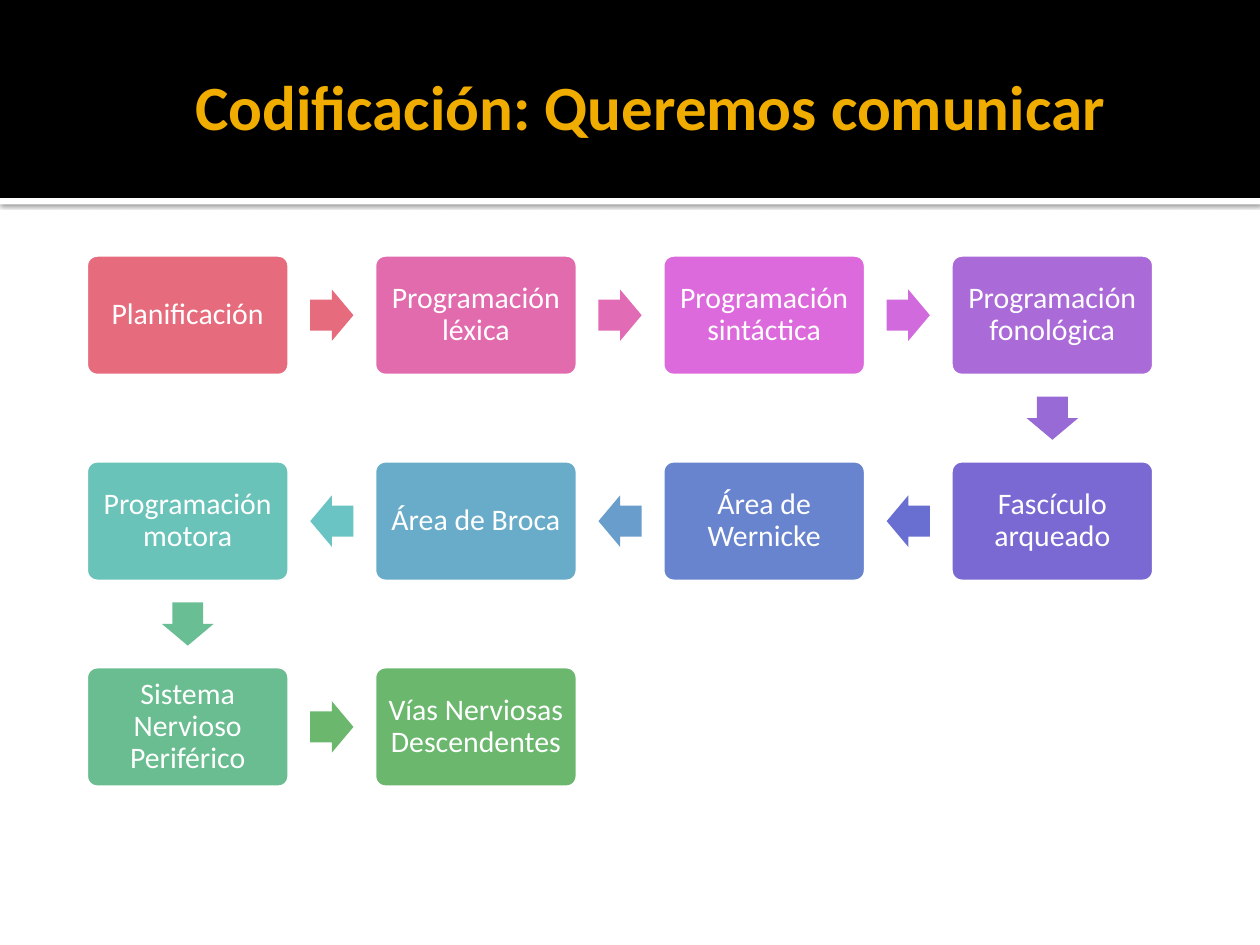
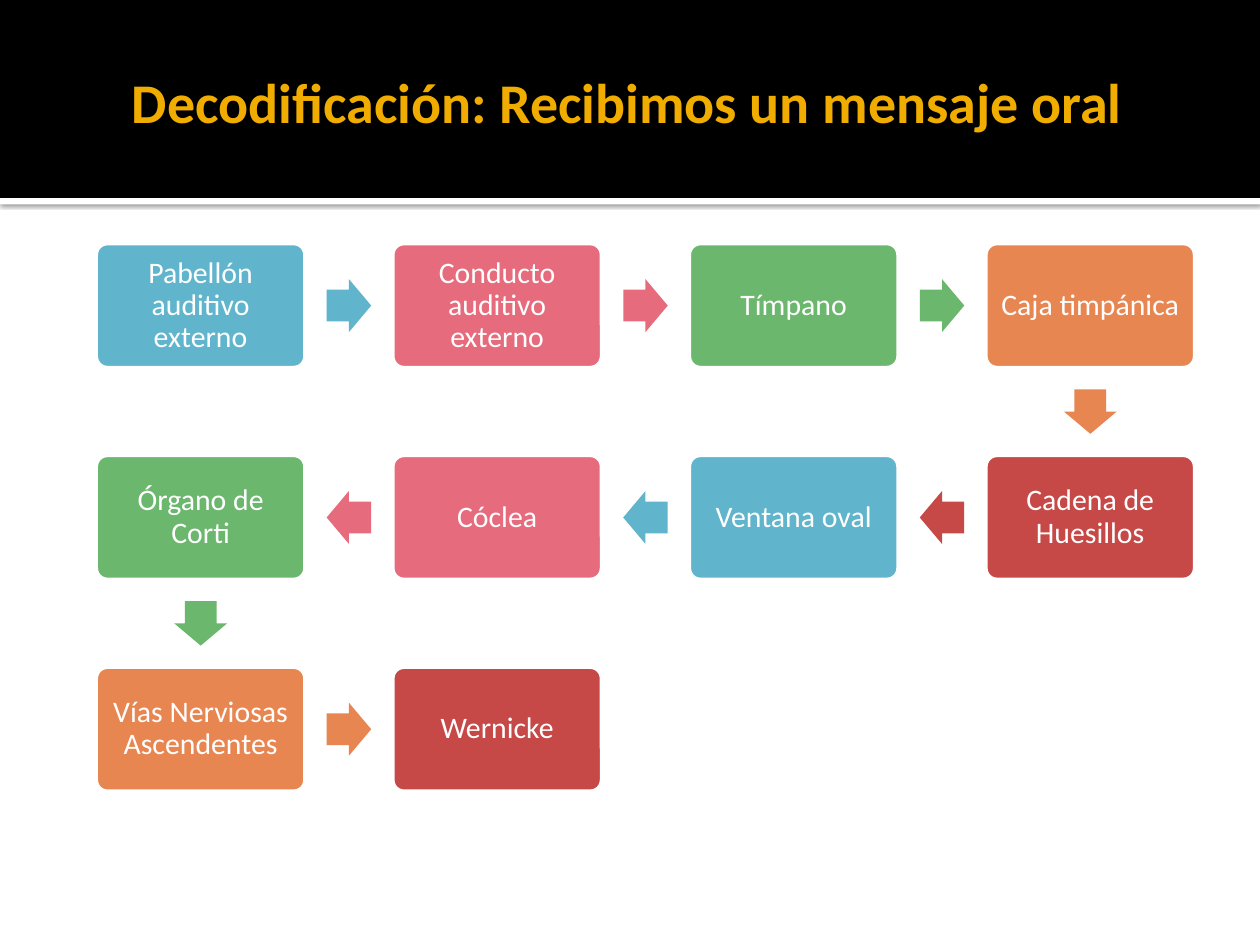
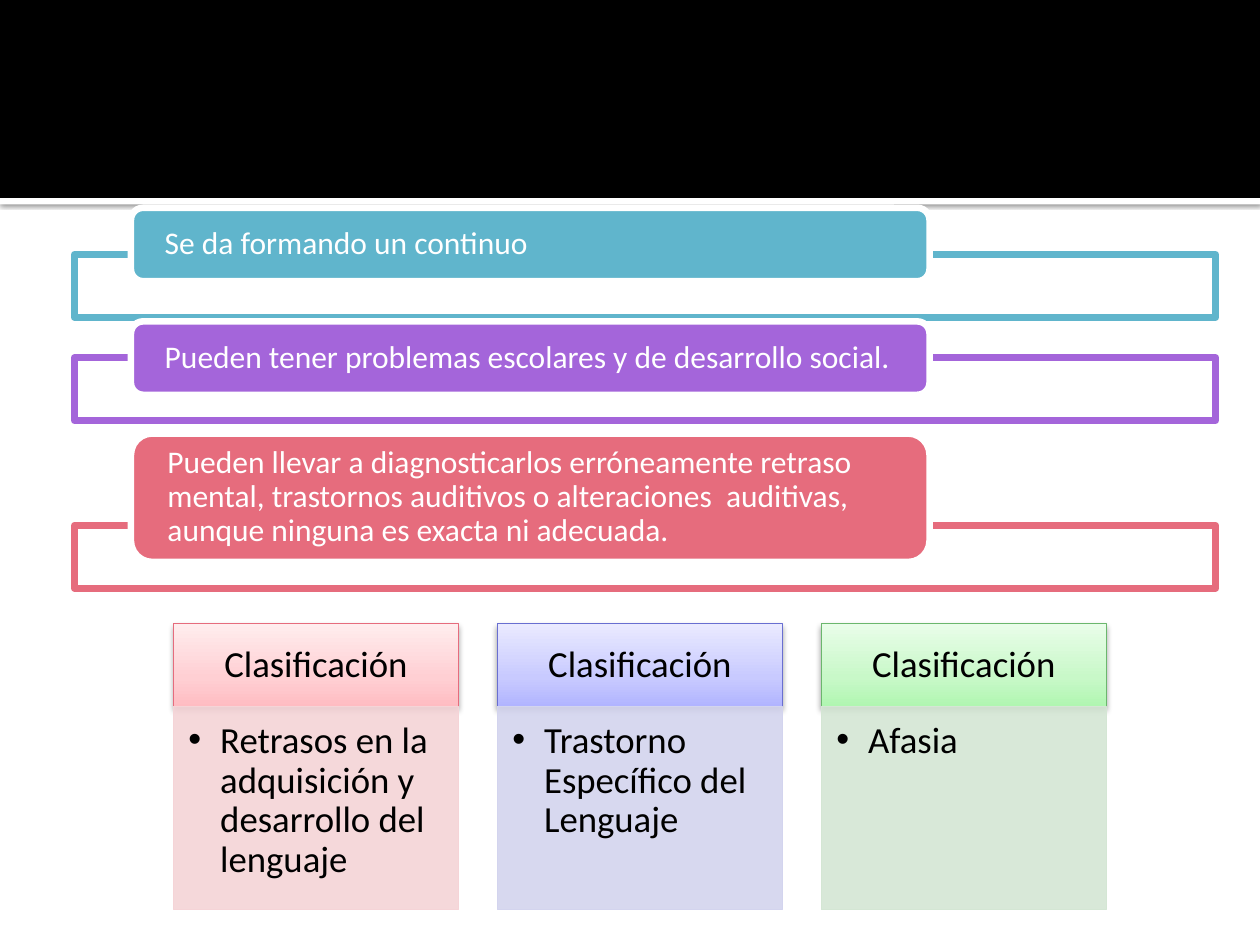
from copy import deepcopy

from pptx import Presentation
from pptx.dml.color import RGBColor
from pptx.enum.shapes import MSO_SHAPE
from pptx.enum.text import MSO_ANCHOR, MSO_AUTO_SIZE, PP_ALIGN
from pptx.oxml import parse_xml
from pptx.oxml.ns import nsdecls, qn
from pptx.util import Cm, Pt

FONT = "Calibri"
BLACK, WHITE, GOLD = "000000", "FFFFFF", "F0AD00"
BLUE, ROSE, GREEN = "60B5CC", "E66C7D", "6BB76D"
ORANGE, RED, PURPLE, INDIGO = "E88651", "C64847", "A465DA", "696FD1"


def paint(shape, fill=None, gradient=None, alpha=None, line=None, width=0.5, shadow=None):
    """Fill is a hex colour; gradient lists hex stops; shadow is opacity, blur, distance."""
    properties = shape.element.spPr
    if gradient:
        shape.fill.gradient()
        shape.fill.gradient_angle = 90
        stop_list = properties.find(".//" + qn("a:gsLst"))
        stop_list.insert(1, deepcopy(stop_list[0]))
        for stop, position, tone in zip(shape.fill.gradient_stops, (0, 0.35, 1), gradient):
            stop.position = position
            stop.color.rgb = RGBColor.from_string(tone)
    else:
        shape.fill.solid()
        shape.fill.fore_color.rgb = RGBColor.from_string(fill)
    if alpha:
        tone = properties.find(qn("a:solidFill"))[0]
        tone.append(parse_xml(f'<a:alpha {nsdecls("a")} val="{alpha * 1000}"/>'))
    if line:
        shape.line.color.rgb = RGBColor.from_string(line)
        shape.line.width = Pt(width)
    else:
        shape.line.fill.background()
    shape.shadow.inherit = False
    if shadow:
        opacity, blur, distance = shadow
        properties.find(qn("a:effectLst")).append(parse_xml(
            f'<a:outerShdw {nsdecls("a")} blurRad="{Pt(blur)}" dist="{Pt(distance)}" '
            f'dir="5400000" rotWithShape="0"><a:srgbClr val="{BLACK}">'
            f'<a:alpha val="{opacity * 1000}"/></a:srgbClr></a:outerShdw>'))


def write(shape, text, size=17, color=WHITE, bold=False, align=PP_ALIGN.CENTER,
          anchor=MSO_ANCHOR.MIDDLE, insets=(0.18, 0.18, 0.18, 0.18), spacing=0.9, bullet=False):
    """Insets are left, top, right and bottom in centimetres."""
    frame = shape.text_frame
    frame.text = text
    frame.word_wrap = True
    frame.auto_size = MSO_AUTO_SIZE.NONE
    frame.vertical_anchor = anchor
    frame.margin_left, frame.margin_top, frame.margin_right, frame.margin_bottom = map(Cm, insets)
    paragraph = frame.paragraphs[0]
    paragraph.alignment = align
    paragraph.line_spacing = spacing
    font = paragraph.runs[0].font
    font.name, font.size, font.bold = FONT, Pt(size), bold
    font.color.rgb = RGBColor.from_string(color)
    if bullet:
        settings = paragraph._p.get_or_add_pPr()
        settings.set("marL", str(Cm(0.64)))
        settings.set("indent", str(-Cm(0.64)))
        settings.append(parse_xml(f'<a:buFont {nsdecls("a")} typeface="Arial"/>'))
        settings.append(parse_xml(f'<a:buChar {nsdecls("a")} char="•"/>'))


presentation = Presentation()
presentation.slide_width, presentation.slide_height = Cm(25.4), Cm(19.05)
title_only, blank = presentation.slide_layouts[5], presentation.slide_layouts[6]

# Content of the two flows
encoding_steps = [
    ("Planificación", ROSE), ("Programación léxica", "E26BAE"),
    ("Programación sintáctica", "DD6ADC"), ("Programación fonológica", "AA6AD8"),
    ("Fascículo arqueado", "7A69D3"), ("Área de Wernicke", "6984CE"),
    ("Área de Broca", "69ACC9"), ("Programación motora", "6AC3B8"),
    ("Sistema Nervioso Periférico", "6ABD90"), ("Vías Nerviosas Descendentes", GREEN),
]
encoding_arrows = [ROSE, "E16BB4", "D16ADC", "986AD6", INDIGO, "699DCB", "6AC4C3", "6ABE94", GREEN]
decoding_steps = [
    ("Pabellón auditivo externo", BLUE), ("Conducto auditivo externo", ROSE),
    ("Tímpano", GREEN), ("Caja timpánica", ORANGE), ("Cadena de Huesillos", RED),
    ("Ventana oval", BLUE), ("Cóclea", ROSE), ("Órgano de Corti", GREEN),
    ("Vías Nerviosas Ascendentes", ORANGE), ("Wernicke", RED),
]
decoding_arrows = [tone for _, tone in decoding_steps[:-1]]

# Title, its size, alignment and left inset; flow origin and step width; steps and arrows
flows = [
    ("Codificación: Queremos comunicar", 36, PP_ALIGN.LEFT, 2.67,
     1.71, 5.11, 4.15, encoding_steps, encoding_arrows),
    ("Decodificación: Recibimos un mensaje oral", 32, PP_ALIGN.CENTER, 0.15,
     1.91, 4.88, 4.27, decoding_steps, decoding_arrows),
]

# Slides 1 and 2: steps winding right, down and left in rows of four
for title, size, align, inset, left, top, step_width, steps, arrow_tones in flows:
    slide = presentation.slides.add_slide(title_only)
    heading = slide.shapes.title
    heading.left, heading.top, heading.width, heading.height = Cm(1.27), Cm(1.12), Cm(22.86), Cm(2.8)
    write(heading, title, size=size, color=GOLD, bold=True, align=align,
          anchor=MSO_ANCHOR.TOP, insets=(inset, 0.25, 0.25, 0.13), spacing=1.0)

    step_height = 0.6 * step_width
    arrow_length, arrow_breadth = 0.21 * step_width, 0.25 * step_width
    for index, (label, tone) in enumerate(steps):
        row, place = divmod(index, 4)
        column = place if row % 2 == 0 else 3 - place
        x, y = left + column * 1.4 * step_width, top + row * step_width
        step = slide.shapes.add_shape(
            MSO_SHAPE.ROUNDED_RECTANGLE, Cm(x), Cm(y), Cm(step_width), Cm(step_height))
        step.adjustments[0] = 0.1
        paint(step, fill=tone, line=WHITE, width=3.78)
        write(step, label)

        # Arrow halfway between the previous step and this one
        center_x, center_y = x + step_width / 2, y + step_height / 2
        if index:
            arrow = slide.shapes.add_shape(
                MSO_SHAPE.RIGHT_ARROW,
                Cm((previous_x + center_x - arrow_length) / 2),
                Cm((previous_y + center_y - arrow_breadth) / 2),
                Cm(arrow_length), Cm(arrow_breadth))
            arrow.left = Cm((previous_x + center_x) / 2 - arrow_length / 2)
            arrow.top = Cm((previous_y + center_y) / 2 - arrow_breadth / 2)
            arrow.adjustments[0], arrow.adjustments[1] = 0.6, 0.5
            arrow.rotation = 90 if place == 0 else 180 * (row % 2)
            paint(arrow, fill=arrow_tones[index - 1])
        previous_x, previous_y = center_x, center_y

# Slide 3: statements over open frames
slide = presentation.slides.add_slide(blank)
statements = [
    ("Se da formando un continuo", BLUE, 5.13, 4.19, 1.48),
    ("Pueden tener problemas escolares y de desarrollo social.", PURPLE, 7.21, 6.48, 1.48),
    ("Pueden llevar a diagnosticarlos erróneamente retraso mental, trastornos auditivos o "
     "alteraciones  auditivas, aunque ninguna es exacta ni adecuada.", ROSE, 10.59, 8.74, 2.59),
]
for text, tone, frame_top, statement_top, statement_height in statements:
    open_frame = slide.shapes.add_shape(
        MSO_SHAPE.RECTANGLE, Cm(1.5), Cm(frame_top), Cm(23.01), Cm(1.27))
    paint(open_frame, fill=WHITE, alpha=90, line=tone, width=3.78)
    statement = slide.shapes.add_shape(
        MSO_SHAPE.ROUNDED_RECTANGLE, Cm(2.64), Cm(statement_top), Cm(16.1), Cm(statement_height))
    paint(statement, fill=tone, line=WHITE, width=3.78)
    write(statement, text, size=18, align=PP_ALIGN.LEFT, insets=(0.61, 0, 0.61, 0))

# Slide 3: three classification columns
classes = [
    ("Retrasos en la adquisición y desarrollo del lenguaje",
     ROSE, ("FFBCC2", "FFCFD3", "FFEDEE"), "F5D4D7"),
    ("Trastorno Específico del Lenguaje", INDIGO, ("B1B4FF", "C8CAFF", "EAEAFF"), "D3D4EE"),
    ("Afasia", GREEN, ("B0F6B1", "C8F8C8", "E9FDE9"), "D4E6D4"),
]
for column, (disorder, edge, tones, panel_tone) in enumerate(classes):
    x = 3.5 + column * 6.53
    header = slide.shapes.add_shape(MSO_SHAPE.RECTANGLE, Cm(x), Cm(12.57), Cm(5.74), Cm(1.68))
    paint(header, gradient=tones, line=edge, shadow=(38, 3.5, 2))
    write(header, "Clasificación", size=21, color=BLACK, insets=(0.41, 0.23, 0.41, 0.23))
    panel = slide.shapes.add_shape(MSO_SHAPE.RECTANGLE, Cm(x), Cm(14.25), Cm(5.74), Cm(4.09))
    paint(panel, fill=panel_tone, alpha=90, line=panel_tone)
    write(panel, disorder, size=21, color=BLACK, align=PP_ALIGN.LEFT,
          anchor=MSO_ANCHOR.TOP, insets=(0.3, 0.3, 0.41, 0.46), bullet=True)

# Shared bands, moved to the back of the slide master
bands = [(3.99, 0.13, WHITE, (60, 2.5, 0.8)), (0, 3.99, BLACK, None)]
for order, (band_top, band_height, tone, shadow) in enumerate(bands):
    band = slide.shapes.add_shape(
        MSO_SHAPE.RECTANGLE, 0, Cm(band_top), presentation.slide_width, Cm(band_height))
    paint(band, fill=tone, shadow=shadow)
    band.element.nvSpPr.cNvPr.id = 20 + order
    presentation.slide_master.shapes.element.insert(2 + order, band.element)

presentation.save("out.pptx")
